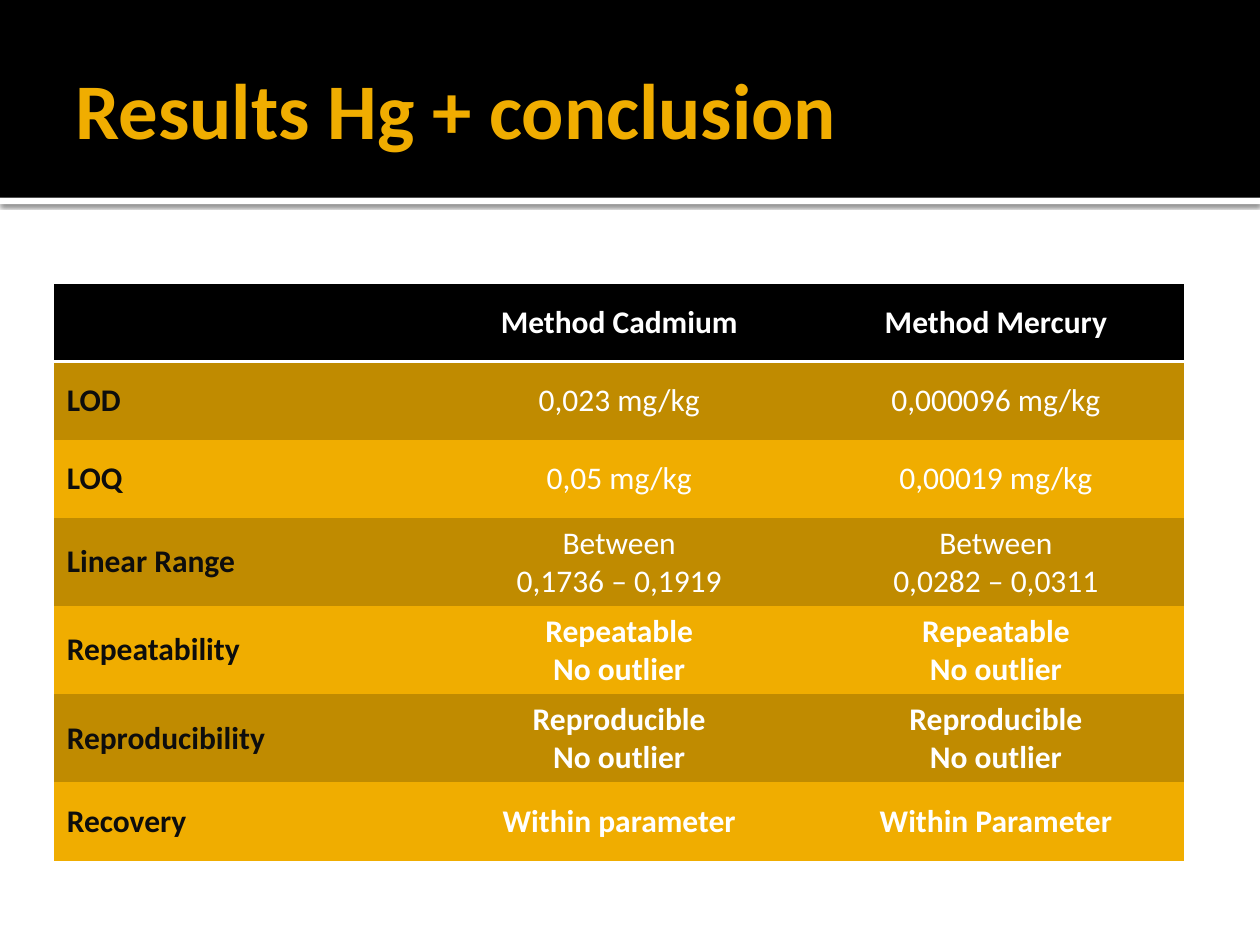
from dataclasses import dataclass

from lxml.etree import SubElement
from pptx import Presentation
from pptx.dml.color import RGBColor
from pptx.enum.shapes import MSO_SHAPE as Shape
from pptx.enum.text import MSO_ANCHOR as Anchor, PP_ALIGN as Align
from pptx.oxml import parse_xml
from pptx.oxml.ns import nsdecls, qn
from pptx.util import Inches, Pt

COLORS = {"black": "000000", "white": "FFFFFF", "gold": "F0AD00",
          "dark gold": "C08B00", "label": "0D0D0D"}
WIDTH, HEIGHT = Inches(10), Inches(7.5)
BAND_HEIGHT = Inches(1.57)
COLUMN_WIDTH, ROW_HEIGHT = Inches(2.99), Inches(0.62)
PLAIN_TABLE_STYLE = "{2D5ABB26-0587-4C30-8999-92F81FD0307C}"


@dataclass
class Row:
    label: str
    cadmium: str
    mercury: str
    bold: bool = True


ROWS = [
    Row("", "Method Cadmium", "Method Mercury"),
    Row("LOD", "0,023 mg/kg", "0,000096 mg/kg", bold=False),
    Row("LOQ", "0,05 mg/kg", "0,00019 mg/kg", bold=False),
    Row("Linear Range", "Between\n0,1736 – 0,1919", "Between\n0,0282 – 0,0311", bold=False),
    Row("Repeatability", "Repeatable\nNo outlier", "Repeatable\nNo outlier"),
    Row("Reproducibility", "Reproducible\nNo outlier", "Reproducible\nNo outlier"),
    Row("Recovery", "Within parameter", "Within Parameter"),
]


def rgb(name: str) -> RGBColor:
    return RGBColor.from_string(COLORS[name])


def write(frame, text: str, color: str, size: float, bold: bool, align=Align.LEFT) -> None:
    frame.text = text
    for para in frame.paragraphs:
        para.alignment = align
        style = {"name": "Calibri", "size": Pt(size), "bold": bold}
        for key, value in style.items():
            setattr(para.font, key, value)
        para.font.color.rgb = rgb(color)
        for span in para.runs:
            for key, value in style.items():
                setattr(span.font, key, value)
            span.font.color.rgb = rgb(color)


def add_band(page, top: int, height: int, color: str):
    band = page.shapes.add_shape(Shape.RECTANGLE, 0, top, WIDTH, height)
    band.shadow.inherit = False
    band.fill.solid()
    band.fill.fore_color.rgb = rgb(color)
    band.line.fill.background()
    return band


def add_drop_shadow(shape) -> None:
    effects = shape._element.spPr.find(qn("a:effectLst"))
    effects.append(parse_xml(
        f'<a:outerShdw {nsdecls("a")} blurRad="{Pt(2.5)}" dist="{Pt(0.8)}" '
        f'dir="5400000" algn="tl" rotWithShape="0"><a:srgbClr val="{COLORS["black"]}">'
        '<a:alpha val="60000"/></a:srgbClr></a:outerShdw>'))


def add_bottom_border(cell, color: str, width: float) -> None:
    line = SubElement(cell._tc.get_or_add_tcPr(), qn("a:lnB"), w=str(Pt(width)))
    fill = SubElement(line, qn("a:solidFill"))
    SubElement(fill, qn("a:srgbClr"), val=COLORS[color])


def add_title(page, text: str) -> None:
    box = page.shapes.add_textbox(Inches(0.5), Inches(0.17), Inches(9), Inches(1.37))
    frame = box.text_frame
    layout = {"word_wrap": True, "vertical_anchor": Anchor.MIDDLE,
              "margin_left": Inches(0.1), "margin_right": Inches(0.05)}
    for key, value in layout.items():
        setattr(frame, key, value)
    write(frame, text, "gold", 45, True)


def add_results(page, rows: list[Row]) -> None:
    table = page.shapes.add_table(len(rows), 3, Inches(0.43), Inches(2.25),
                                  COLUMN_WIDTH * 3, ROW_HEIGHT * len(rows)).table
    table._tbl.tblPr.find(qn("a:tableStyleId")).text = PLAIN_TABLE_STYLE
    for column in table.columns:
        column.width = COLUMN_WIDTH
    for r, row in enumerate(rows):
        table.rows[r].height = ROW_HEIGHT
        fill = "black" if r == 0 else "dark gold" if r % 2 else "gold"
        for c, text in enumerate((row.label, row.cadmium, row.mercury)):
            cell = table.cell(r, c)
            cell.vertical_anchor = Anchor.MIDDLE
            if r == 0:
                add_bottom_border(cell, "white", 2)
            cell.fill.solid()
            cell.fill.fore_color.rgb = rgb(fill)
            if c == 0:
                write(cell.text_frame, text, "label", 18, True)
            else:
                write(cell.text_frame, text, "white", 18, row.bold, Align.CENTER)


def main() -> None:
    deck = Presentation()
    deck.slide_width, deck.slide_height = WIDTH, HEIGHT
    page = deck.slides.add_slide(deck.slide_layouts[6])
    add_drop_shadow(add_band(page, BAND_HEIGHT, Inches(0.05), "white"))
    add_band(page, 0, BAND_HEIGHT, "black")
    add_title(page, "Results Hg + conclusion")
    add_results(page, ROWS)
    deck.save("out.pptx")


if __name__ == "__main__":
    main()
